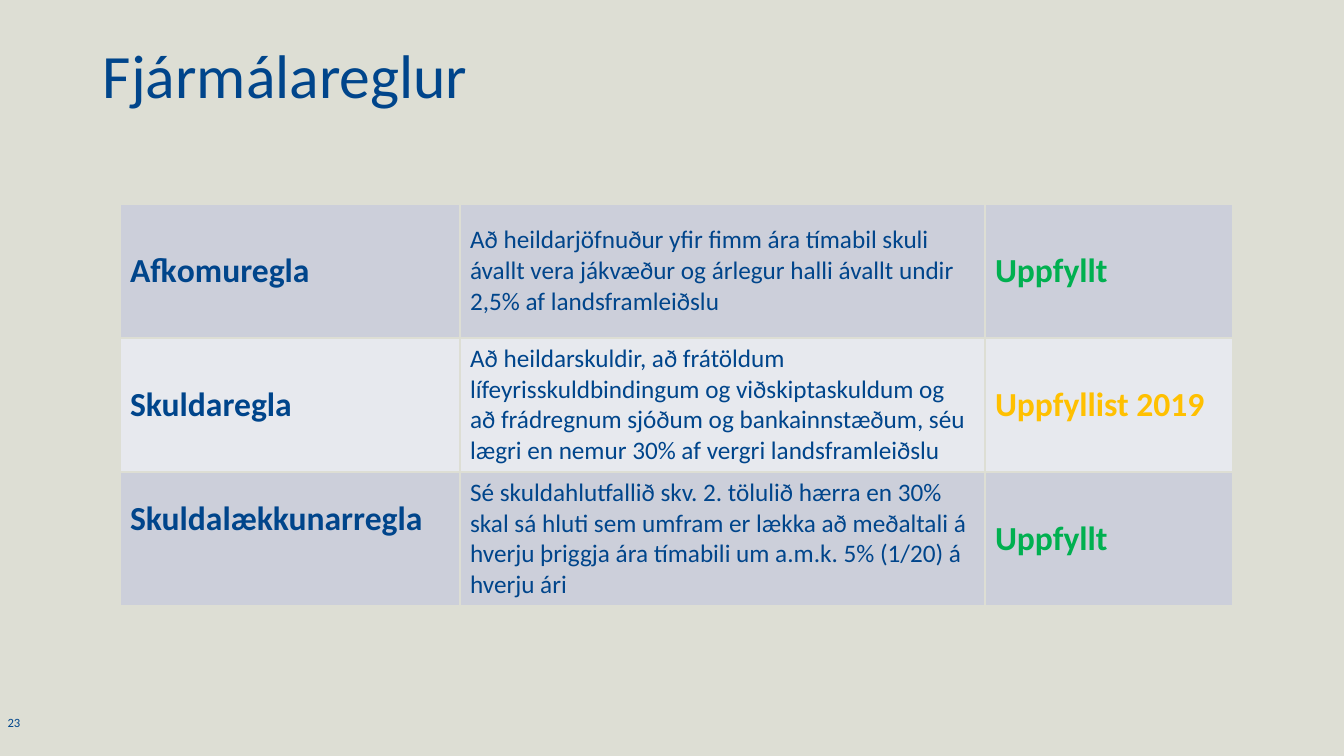
from dataclasses import dataclass

from lxml.etree import SubElement
from pptx import Presentation
from pptx.dml.color import RGBColor as Rgb
from pptx.enum.text import MSO_ANCHOR as Anchor, PP_ALIGN as Align
from pptx.oxml.ns import qn
from pptx.util import Emu, Pt

EMU_PER_PX = 12192000 / 1344
PAGE = (1344, 756)


@dataclass(frozen=True)
class Theme:
    """Colours, font and type sizes of the deck."""
    font: str = "Calibri"
    back: str = "DDDED4"
    ink: str = "00458B"
    met: str = "00B050"
    later: str = "FFC000"
    bands: tuple = ("CCCFDA", "E7E9EE")
    title: int = 44
    label: int = 24
    body: int = 18
    number: int = 9


THEME = Theme()
COLUMNS = (340, 525, 248)
ROW_HEIGHT = 134
RAISED_MARGIN = 45
RULES = (
    ("Afkomuregla",
     "Að heildarjöfnuður yfir fimm ára tímabil skuli ávallt vera jákvæður "
     "og árlegur halli ávallt undir 2,5% af landsframleiðslu",
     "Uppfyllt", THEME.met),
    ("Skuldaregla",
     "Að heildarskuldir, að frátöldum lífeyrisskuldbindingum og "
     "viðskiptaskuldum og að frádregnum sjóðum og bankainnstæðum, séu "
     "lægri en nemur 30% af vergri landsframleiðslu",
     "Uppfyllist 2019", THEME.later),
    ("Skuldalækkunarregla",
     "Sé skuldahlutfallið skv. 2. tölulið hærra en 30% skal sá hluti sem "
     "umfram er lækka að meðaltali á hverju þriggja ára tímabili um "
     "a.m.k. 5% (1/20) á hverju ári",
     "Uppfyllt", THEME.met),
)


def px(length):
    """Turn pixels into EMU."""
    return Emu(round(length * EMU_PER_PX))


def apply(target, formats):
    """Set each attribute in a dict of format values."""
    for name, value in formats.items():
        setattr(target, name, value)


def write(frame, text, size, color=THEME.ink, bold=False, **formats):
    """Put one formatted paragraph in a text frame."""
    para = frame.paragraphs[0]
    apply(para, formats)
    span = para.add_run()
    span.text = text
    apply(span.font, {"name": THEME.font, "size": Pt(size), "bold": bold})
    span.font.color.rgb = Rgb.from_string(color)


def add_text(page, box, text, size, inset=(10, 5), **formats):
    """Place a wrapped text box with top-anchored text."""
    frame = page.shapes.add_textbox(*map(px, box)).text_frame
    across, down = map(px, inset)
    apply(frame, {"word_wrap": True, "vertical_anchor": Anchor.TOP,
                  "margin_left": across, "margin_right": across,
                  "margin_top": down, "margin_bottom": down})
    write(frame, text, size, **formats)


def style_cell(cell, fill):
    """Give a cell thin borders, a band colour and middle anchoring."""
    properties = cell._tc.get_or_add_tcPr()
    for side in ("lnL", "lnR", "lnT", "lnB"):
        line = SubElement(properties, qn(f"a:{side}"), w=str(Pt(1)))
        solid = SubElement(line, qn("a:solidFill"))
        SubElement(solid, qn("a:srgbClr"), val=THEME.back)
    cell.fill.solid()
    cell.fill.fore_color.rgb = Rgb.from_string(fill)
    cell.vertical_anchor = Anchor.MIDDLE


def add_rules(page, left, top):
    """Place the table of fiscal rules with its corner at left, top."""
    box = (left, top, sum(COLUMNS), ROW_HEIGHT * len(RULES))
    table = page.shapes.add_table(len(RULES), len(COLUMNS), *map(px, box)).table
    apply(table, {"first_row": False, "horz_banding": False})
    for column, width in zip(table.columns, COLUMNS):
        column.width = px(width)
    for index, (name, rule, status, color) in enumerate(RULES):
        table.rows[index].height = px(ROW_HEIGHT)
        cells = table.rows[index].cells
        for cell in cells:
            style_cell(cell, THEME.bands[index % 2])
        write(cells[0].text_frame, name, THEME.label, bold=True)
        write(cells[1].text_frame, rule, THEME.body)
        write(cells[2].text_frame, status, THEME.label, color, bold=True)
    table.cell(len(RULES) - 1, 0).margin_bottom = px(RAISED_MARGIN)


def add_rules_page(deck):
    """Build the page on fiscal rules."""
    page = deck.slides.add_slide(deck.slide_layouts[6])
    page.background.fill.solid()
    page.background.fill.fore_color.rgb = Rgb.from_string(THEME.back)
    add_text(page, (0, 715, 28, 26), "23", THEME.number, inset=(0, 0),
             alignment=Align.CENTER)
    add_text(page, (93, 40, 1159, 146), "Fjármálareglur", THEME.title,
             line_spacing=0.9)
    add_rules(page, 120, 204)


def main():
    """Build and save the deck."""
    deck = Presentation()
    deck.slide_width, deck.slide_height = map(px, PAGE)
    add_rules_page(deck)
    deck.save("out.pptx")


if __name__ == "__main__":
    main()
